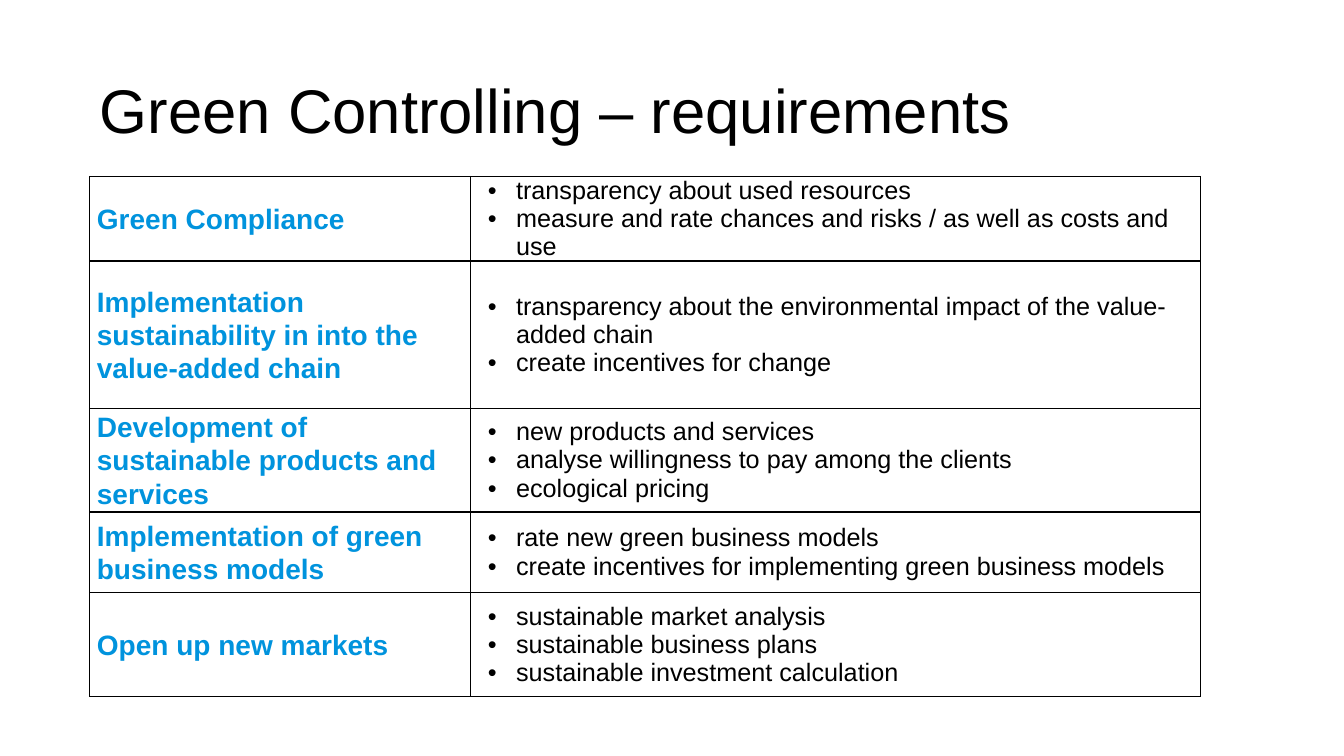
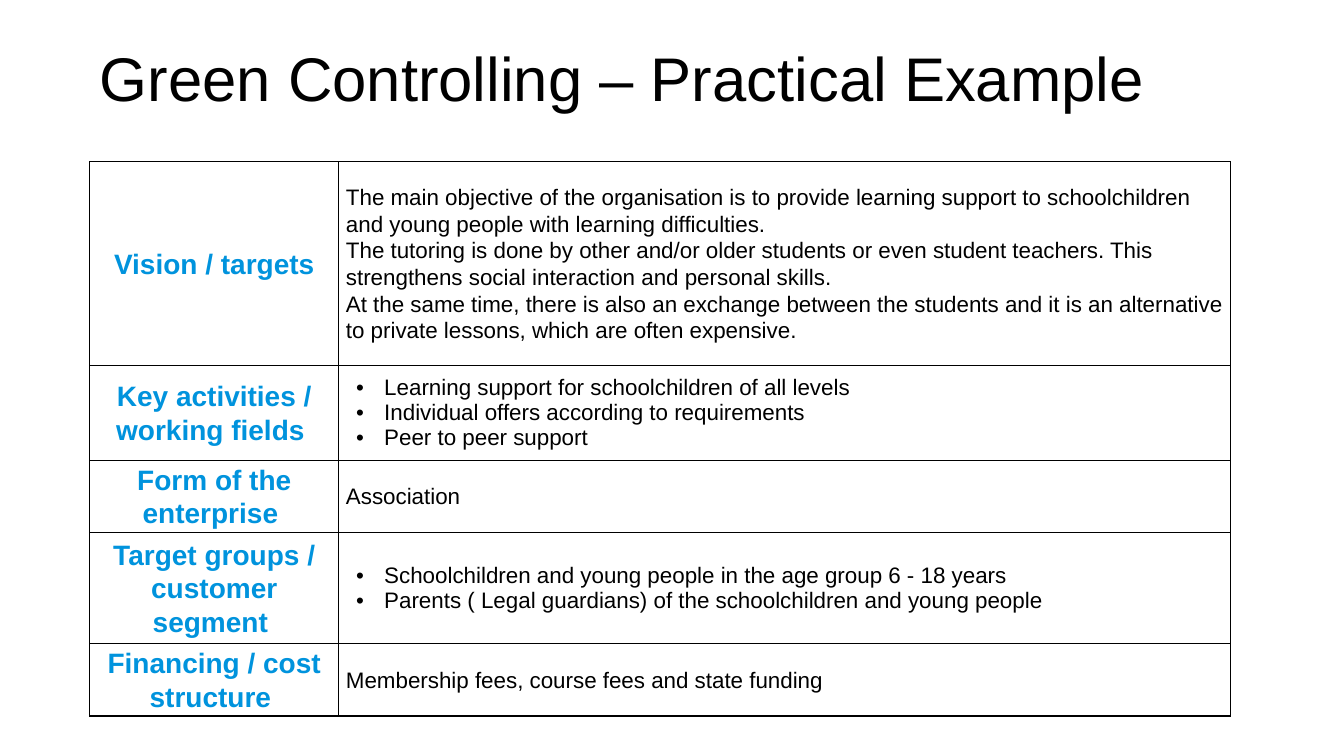
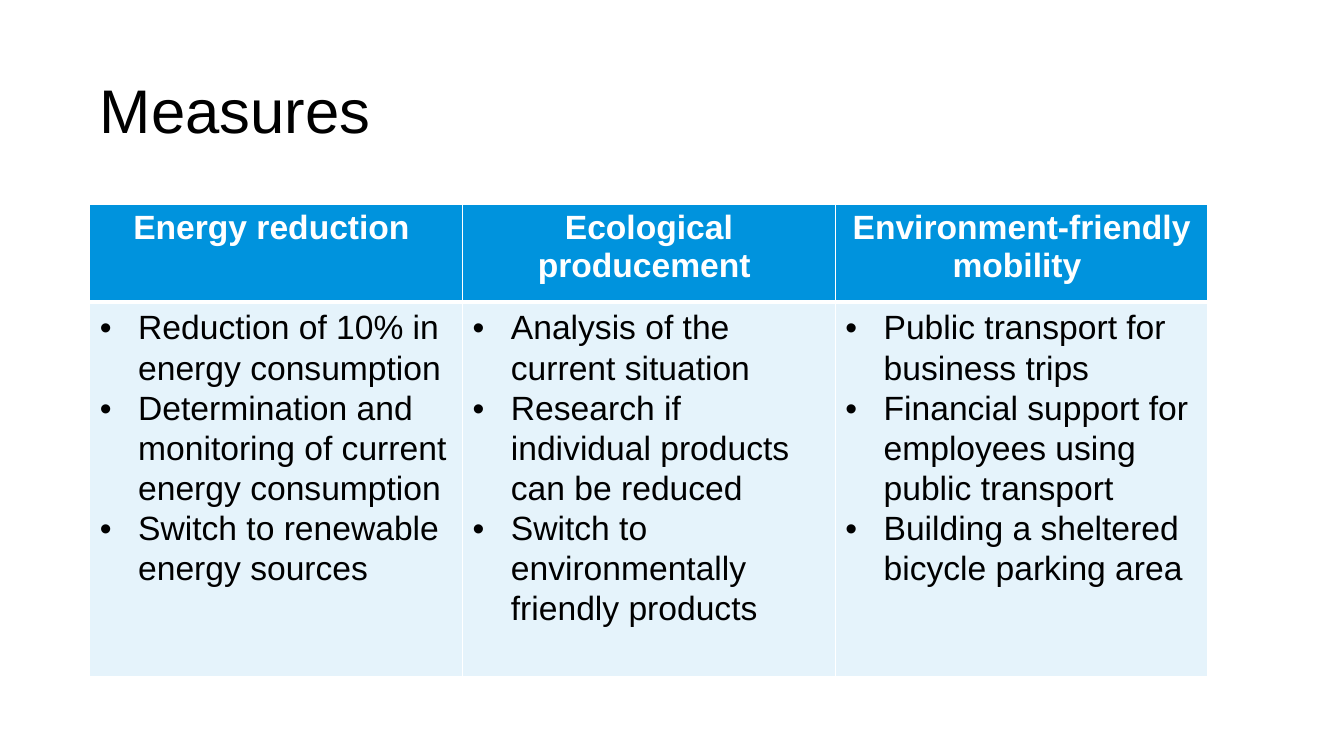
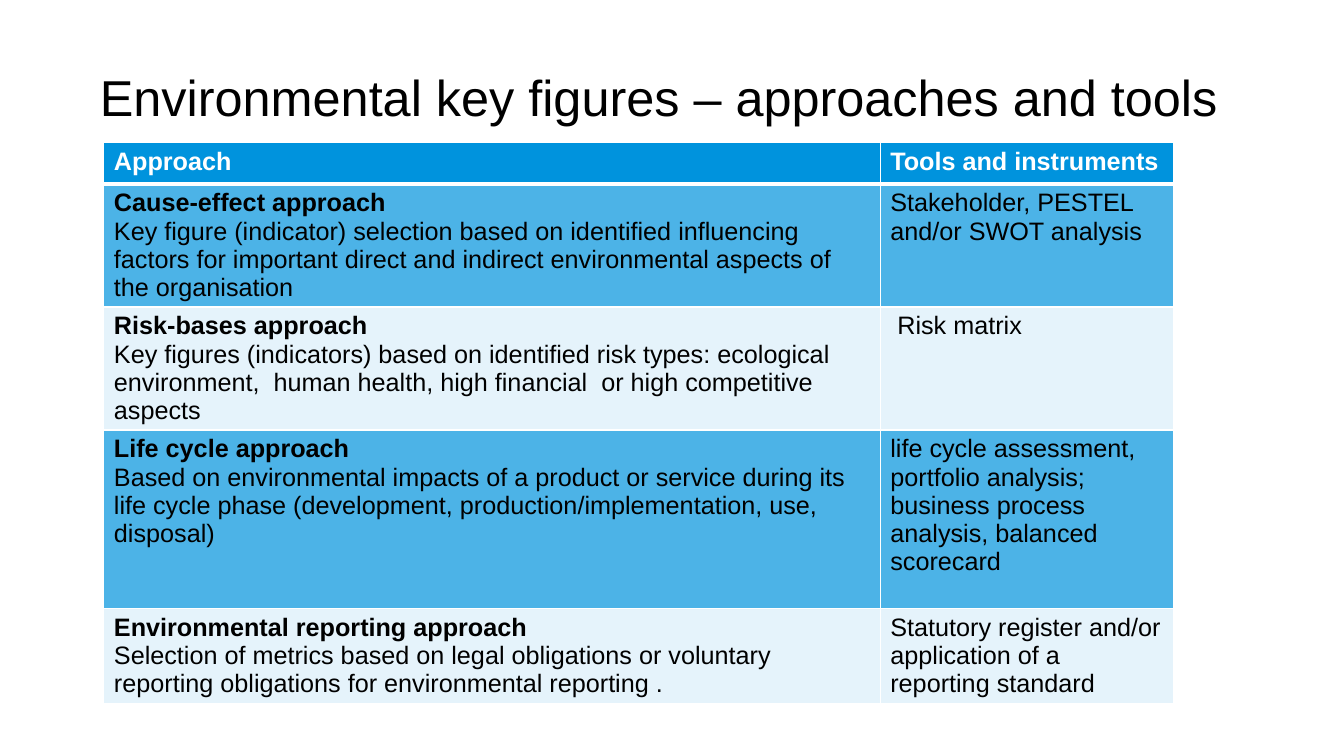
"""Build four slides of tables about green controlling."""
from dataclasses import dataclass, replace

from lxml import etree
from pptx import Presentation
from pptx import util as u
from pptx.dml.color import RGBColor
from pptx.enum import text
from pptx.oxml.ns import qn

BLUE = RGBColor(0x00, 0x93, 0xDD)
BLACK = RGBColor(0x00, 0x00, 0x00)
WHITE = RGBColor(0xFF, 0xFF, 0xFF)
FONT = "Arial"

WIDTH, HEIGHT = u.Inches(13.33), u.Inches(7.5)
LEFT = 6.68
TITLE_BOX = (LEFT, 5.33, 80.25, 19.33)
LOW_TITLE_SPACE = 9.07

CENTER = text.PP_ALIGN.CENTER
MIDDLE = text.MSO_ANCHOR.MIDDLE
TOP = text.MSO_ANCHOR.TOP


@dataclass(frozen=True)
class TextStyle:
    """Look of one paragraph; indents are shares of the slide width."""
    size: int
    colour: RGBColor = BLACK
    bold: bool = False
    align: text.PP_ALIGN = text.PP_ALIGN.LEFT
    spacing: float = 1.0
    indent: float = 0
    hang: float = 0


@dataclass(frozen=True)
class CellStyle:
    """Look of one cell: anchor, side insets, border, fill and opacity."""
    anchor: text.MSO_ANCHOR = TOP
    tight: bool = False
    border: RGBColor = WHITE
    bottom: int = 1
    filled: bool = True
    opacity: int = 100


LABEL = TextStyle(20, BLUE, True, spacing=1.07)
CENTRED_LABEL = replace(LABEL, align=CENTER)
BULLET = TextStyle(18, indent=2.85, hang=2.1)
SMALL_BULLET = replace(BULLET, size=16)
SMALL_TEXT = TextStyle(16, spacing=1.07)
MEASURE_HEAD = TextStyle(24, WHITE, True, CENTER)
MEASURE = TextStyle(24, spacing=1.07, indent=2.85, hang=2.85)
HEAD = TextStyle(18, WHITE, True)
STRONG = TextStyle(18, bold=True)
PLAIN = TextStyle(18)
INSET_PLAIN = replace(PLAIN, indent=0.52)

OUTLINED = CellStyle(MIDDLE, True, BLACK, filled=False)
HEADER = CellStyle(bottom=3)
PALE = CellStyle(opacity=10)
STRONG_BAND = CellStyle(opacity=70)


def across(share):
    """Return a percentage of the slide width."""
    return u.Emu(round(WIDTH * share / 100))


def down(share):
    """Return a percentage of the slide height."""
    return u.Emu(round(HEIGHT * share / 100))


def paragraphs(style, *texts):
    """Pair each text with the same style."""
    return [(style, line) for line in texts]


def add_text(para, style, line):
    """Write one styled run into a paragraph."""
    properties = para._p.get_or_add_pPr()
    properties.set("marL", str(across(style.indent)))
    properties.set("indent", str(-across(style.hang)))
    if style.hang:
        etree.SubElement(properties, qn("a:buFont")).set("typeface", FONT)
        etree.SubElement(properties, qn("a:buChar")).set("char", "•")
    para.alignment = style.align
    para.line_spacing = style.spacing
    span = para.add_run()
    span.text = line
    span.font.name = FONT
    span.font.size = u.Pt(style.size)
    span.font.bold = style.bold
    span.font.color.rgb = style.colour


def add_page(deck, title, box=TITLE_BOX, size=44, space_below=0):
    """Add a page with its title placed in the given box."""
    page = deck.slides.add_slide(deck.slide_layouts[5])
    holder = page.shapes.title
    left, top, width, height = box
    holder.left, holder.top = across(left), down(top)
    holder.width, holder.height = across(width), down(height)
    frame = holder.text_frame
    frame.word_wrap = True
    frame.auto_size = text.MSO_AUTO_SIZE.NONE
    frame.vertical_anchor = MIDDLE
    if space_below:
        frame.margin_bottom = down(space_below)
    add_text(frame.paragraphs[0], TextStyle(size, spacing=0.9), title)
    return page


def style_cell(cell, style):
    """Set the insets, borders and fill of a cell."""
    cell.vertical_anchor = style.anchor
    if style.tight:
        cell.margin_left = cell.margin_right = across(0.53)
        cell.margin_top = cell.margin_bottom = 0
    properties = cell._tc.get_or_add_tcPr()
    for side in "LRTB":
        points = style.bottom if side == "B" else 1
        line = etree.SubElement(properties, qn(f"a:ln{side}"), w=str(u.Pt(points)))
        paint = etree.SubElement(line, qn("a:solidFill"))
        etree.SubElement(paint, qn("a:srgbClr"), val=str(style.border))
    if not style.filled:
        cell.fill.background()
        return
    cell.fill.solid()
    cell.fill.fore_color.rgb = BLUE
    if style.opacity < 100:
        colour = properties.find(qn("a:solidFill")).find(qn("a:srgbClr"))
        etree.SubElement(colour, qn("a:alpha"), val=str(style.opacity * 1000))


def add_grid(page, box, columns, rows, row_styles, contents):
    """Add a table whose columns and rows share the box by weight."""
    left, top, width, height = box
    table = page.shapes.add_table(
        len(rows), len(columns), across(left), down(top), across(width), down(height)
    ).table
    table.first_row = table.horz_banding = False
    for column, weight in zip(table.columns, columns):
        column.width = across(width * weight / sum(columns))
    for row, weight in zip(table.rows, rows):
        row.height = down(height * weight / sum(rows))
    for row, style, row_contents in zip(table.rows, row_styles, contents):
        for cell, lines in zip(row.cells, row_contents):
            style_cell(cell, style)
            frame = cell.text_frame
            for index, (text_style, line) in enumerate(lines):
                para = frame.add_paragraph() if index else frame.paragraphs[0]
                add_text(para, text_style, line)


def requirements_page(deck):
    """Add the requirements of green controlling."""
    page = add_page(deck, "Green Controlling – requirements")
    topics = [
        ("Green Compliance", [
            "transparency about used resources",
            "measure and rate chances and risks / as well as costs and use"]),
        ("Implementation sustainability in into the value-added chain", [
            "transparency about the environmental impact of the value-added chain",
            "create incentives for change"]),
        ("Development of sustainable products and services", [
            "new products and services",
            "analyse willingness to pay among the clients",
            "ecological pricing"]),
        ("Implementation of green business models", [
            "rate new green business models",
            "create incentives for implementing green business models"]),
        ("Open up new markets", [
            "sustainable market analysis",
            "sustainable business plans",
            "sustainable investment calculation"]),
    ]
    contents = [(paragraphs(LABEL, topic), paragraphs(BULLET, *points))
                for topic, points in topics]
    add_grid(page, (LEFT, 23.33, 82.62, 68.8), (378, 724),
             (84, 146, 103, 80, 103), [OUTLINED] * 5, contents)


def example_page(deck):
    """Add the profile of an example organisation."""
    page = add_page(deck, "Green Controlling – Practical Example",
                    space_below=LOW_TITLE_SPACE)
    profile = [
        ("Vision / targets", SMALL_TEXT, [
            "The main objective of the organisation is to provide learning support "
            "to schoolchildren and young people with learning difficulties.",
            "The tutoring is done by other and/or older students or even student "
            "teachers. This strengthens social interaction and personal skills.",
            "At the same time, there is also an exchange between the students and it "
            "is an alternative to private lessons, which are often expensive."]),
        ("Key activities / working fields ", SMALL_BULLET, [
            "Learning support for schoolchildren of all levels",
            "Individual offers according to requirements",
            "Peer to peer support"]),
        ("Form of the enterprise ", SMALL_TEXT, ["Association"]),
        ("Target groups / customer segment ", SMALL_BULLET, [
            "Schoolchildren and young people in the age group 6 - 18 years",
            "Parents ( Legal guardians) of the schoolchildren and young people"]),
        ("Financing / cost structure ", SMALL_TEXT, [
            "Membership fees, course fees and state funding"]),
    ]
    contents = [(paragraphs(CENTRED_LABEL, topic), paragraphs(style, *lines))
                for topic, style, lines in profile]
    add_grid(page, (LEFT, 21.4, 84.85, 73.33), (247, 884),
             (202, 94, 72, 110, 72), [OUTLINED] * 5, contents)


def measures_page(deck):
    """Add three columns of measures."""
    page = add_page(deck, "Measures")
    measures = {
        "Energy reduction ": [
            "Reduction of 10% in energy consumption",
            "Determination and monitoring of current energy consumption",
            "Switch to renewable energy sources"],
        "Ecological producement ": [
            "Analysis of the current situation",
            "Research if individual products can be reduced",
            "Switch to environmentally friendly products"],
        "Environment-friendly mobility ": [
            "Public transport for business trips",
            "Financial support for employees using public transport",
            "Building a sheltered bicycle parking area"],
    }
    contents = [
        [paragraphs(MEASURE_HEAD, name) for name in measures],
        [paragraphs(MEASURE, *points) for points in measures.values()],
    ]
    add_grid(page, (LEFT, 27, 83.2, 62.53), (1, 1, 1), (97, 372),
             (HEADER, PALE), contents)


def key_figures_page(deck):
    """Add the approaches to key figures and their tools."""
    page = add_page(deck, "Environmental key figures – approaches and tools",
                    (LEFT, 3.6, 94.37, 19.33), 36)
    approaches = [
        ("Cause-effect approach",
         "Key figure (indicator) selection based on identified influencing factors for "
         "important direct and indirect environmental aspects of the organisation",
         PLAIN, "Stakeholder, PESTEL and/or SWOT analysis"),
        ("Risk-bases approach",
         "Key figures (indicators) based on identified risk types: ecological "
         "environment,  human health, high financial  or high competitive aspects",
         INSET_PLAIN, "Risk matrix"),
        ("Life cycle approach",
         "Based on environmental impacts of a product or service during its life cycle "
         "phase (development, production/implementation, use, disposal)",
         PLAIN, "life cycle assessment, portfolio analysis; business process analysis, "
         "balanced scorecard"),
        ("Environmental reporting approach",
         "Selection of metrics based on legal obligations or voluntary reporting "
         "obligations for environmental reporting .",
         PLAIN, "Statutory register and/or application of a reporting standard"),
    ]
    contents = [(paragraphs(HEAD, "Approach"), paragraphs(HEAD, "Tools and instruments"))]
    contents += [([(STRONG, name), (PLAIN, basis)], paragraphs(style, tools))
                 for name, basis, style, tools in approaches]
    add_grid(page, (7.73, 18.87, 79.6, 74.13), (770, 291), (41, 122, 122, 177, 94),
             [HEADER] + [STRONG_BAND, PALE] * 2, contents)


def main():
    """Build and save the deck."""
    deck = Presentation()
    deck.slide_width, deck.slide_height = WIDTH, HEIGHT
    for build in (requirements_page, example_page, measures_page, key_figures_page):
        build(deck)
    deck.save("out.pptx")


if __name__ == "__main__":
    main()
